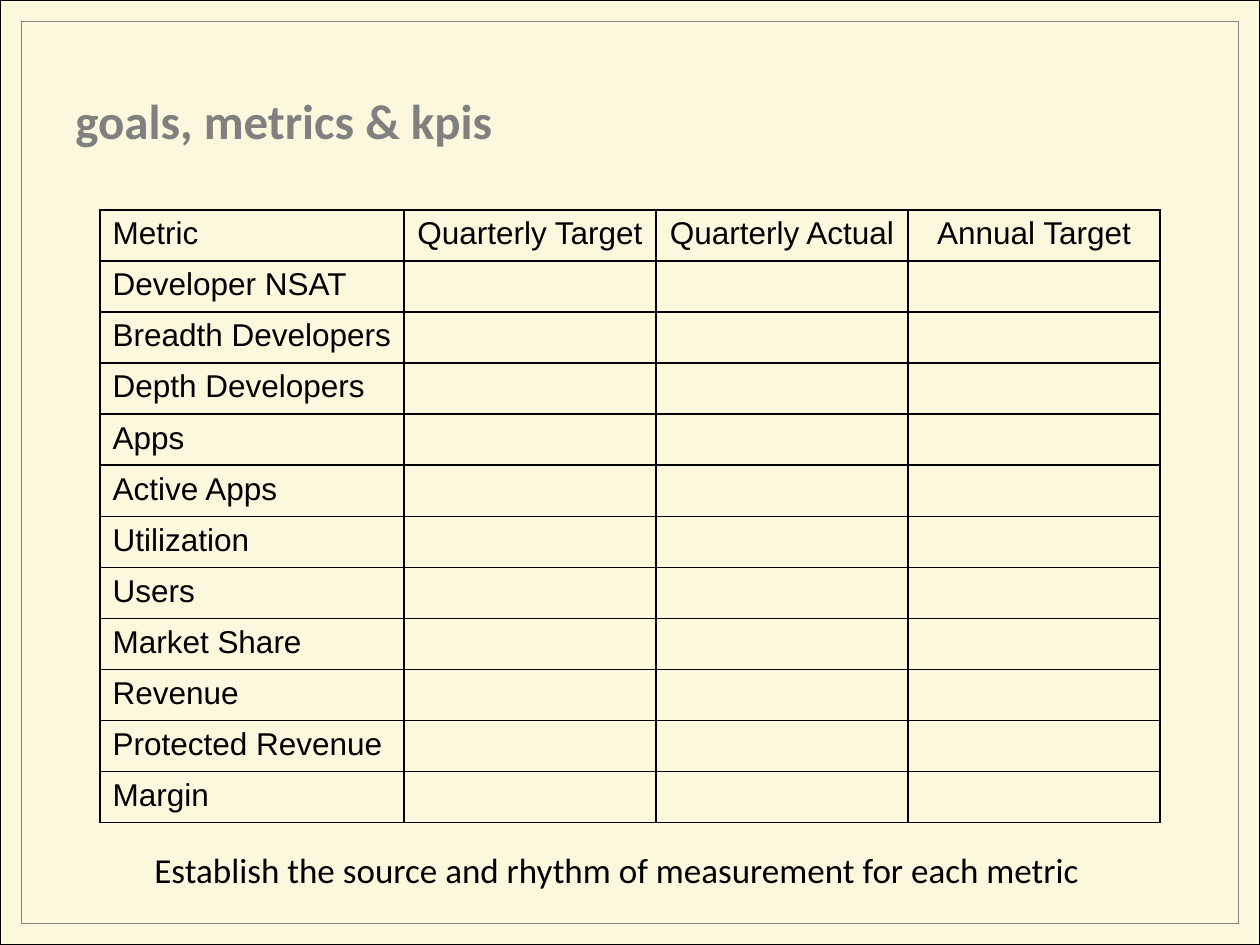
"""Builds a slide with a table of goals, metrics and KPIs."""
from lxml.etree import SubElement
from pptx import Presentation
from pptx.dml.color import RGBColor
from pptx.enum.shapes import MSO_SHAPE as Shape
from pptx.enum.text import MSO_ANCHOR as Anchor, PP_ALIGN as Align
from pptx.oxml.ns import qn
from pptx.util import Emu, Pt

EMU_PER_PX = 914400 / 126
HEADERS = ["Metric", "Quarterly Target", "Quarterly Actual", "Annual Target"]
METRICS = [
    "Developer NSAT", "Breadth Developers", "Depth Developers", "Apps",
    "Active Apps", "Utilization", "Users", "Market Share", "Revenue",
    "Protected Revenue", "Margin",
]


def px(length):
    return Emu(round(length * EMU_PER_PX))


def color(value):
    return RGBColor.from_string(value)


class SlideBuilder:
    heading_font = "Calibri"
    table_font = "Arial"
    ink = "000000"

    def __init__(self, slide):
        self.slide = slide

    def format_text(self, paragraph, font, size, ink, bold=False):
        for run in paragraph.runs:
            run.font.name = font
            run.font.size = Pt(size)
            run.font.bold = bold
            run.font.color.rgb = color(ink)

    def rectangle(self, box, line, width, fill=None):
        shape = self.slide.shapes.add_shape(Shape.RECTANGLE, *map(px, box))
        shape.shadow.inherit = False
        if fill:
            shape.fill.solid()
            shape.fill.fore_color.rgb = color(fill)
        else:
            shape.fill.background()
        shape.line.color.rgb = color(line)
        shape.line.width = Pt(width)

    def text(self, box, content, size, ink=ink, bold=False, anchor=Anchor.TOP, wrap=True):
        frame = self.slide.shapes.add_textbox(*map(px, box)).text_frame
        frame.word_wrap = wrap
        frame.vertical_anchor = anchor
        frame.text = content
        self.format_text(frame.paragraphs[0], self.heading_font, size, ink, bold)

    def cell_borders(self, cell):
        properties = cell._tc.get_or_add_tcPr()
        for side in ("a:lnL", "a:lnR", "a:lnT", "a:lnB"):
            line = SubElement(properties, qn(side), w=str(Pt(1)))
            fill = SubElement(line, qn("a:solidFill"))
            SubElement(fill, qn("a:srgbClr"), val=self.ink)

    def table(self, box, widths, rows):
        table = self.slide.shapes.add_table(len(rows), len(widths), *map(px, box)).table
        table.first_row = table.horz_banding = False
        for column, width in zip(table.columns, widths):
            column.width = px(width)
        for row, values in zip(table.rows, rows):
            for index, (cell, value) in enumerate(zip(row.cells, values)):
                self.cell_borders(cell)
                cell.fill.background()
                cell.text = value
                paragraph = cell.text_frame.paragraphs[0]
                paragraph.alignment = Align.CENTER if index else Align.LEFT
                self.format_text(paragraph, self.table_font, 18, self.ink)


def main():
    presentation = Presentation()
    presentation.slide_width, presentation.slide_height = px(1260), px(945)
    slide = presentation.slides.add_slide(presentation.slide_layouts[6])
    builder = SlideBuilder(slide)

    builder.rectangle((0, 0, 1260, 945), "000000", 0.75, fill="FCF8DE")
    builder.rectangle((21, 21, 1218, 903), "848484", 0.5)
    builder.text((63, 84, 1134, 72), "goals, metrics & kpis", 28, "808080",
                 bold=True, anchor=Anchor.MIDDLE)
    rows = [HEADERS] + [[metric, "", "", ""] for metric in METRICS]
    builder.table((100, 210, 1060, 613), [304, 252, 252, 252], rows)
    builder.text((142, 842, 960, 55),
                 "Establish the source and rhythm of measurement for each metric",
                 20, wrap=False)
    presentation.save("out.pptx")


if __name__ == "__main__":
    main()
